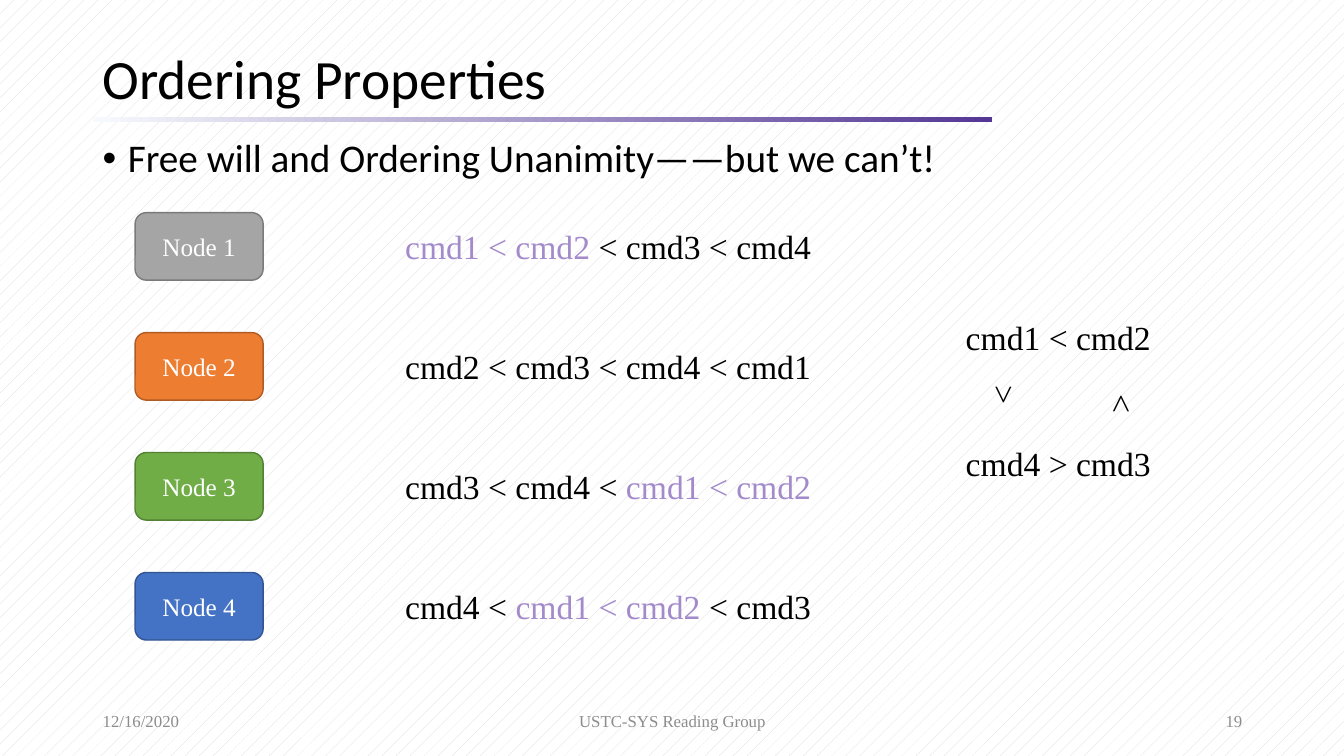
from lxml.etree import SubElement
from pptx import Presentation
from pptx.dml.color import RGBColor
from pptx.enum.dml import MSO_PATTERN
from pptx.enum.shapes import MSO_SHAPE
from pptx.enum.text import MSO_ANCHOR, MSO_AUTO_SIZE, PP_ALIGN
from pptx.oxml.ns import qn
from pptx.util import Inches, Pt

SLIDE_WIDTH, SLIDE_HEIGHT = 13.33, 7.5
MARGIN = 0.92
CONTENT_WIDTH = 11.5
NODE_LEFT, ORDER_LEFT, CYCLE_LEFT = 1.34, 3.92, 9.48
NODE_WIDTH, NODE_HEIGHT = 1.27, 0.67
FIRST_ROW, ROW_PITCH = 2.11, 1.19
LINE_HEIGHT = 0.5
FOOTER_TOP, FOOTER_HEIGHT = 6.95, 0.4

SERIF, SANS = "Times New Roman", "Calibri"
BLACK, WHITE, GREY, LILAC = "000000", "FFFFFF", "8C8C8C", "A38ACB"
AGREED = "cmd1 < cmd2"
NODES = [
    ("Node 1", "A5A5A5", "7A7A7A", "cmd1 < cmd2 < cmd3 < cmd4"),
    ("Node 2", "ED7D31", "AF5C24", "cmd2 < cmd3 < cmd4 < cmd1"),
    ("Node 3", "70AD47", "538035", "cmd3 < cmd4 < cmd1 < cmd2"),
    ("Node 4", "4472C4", "325491", "cmd4 < cmd1 < cmd2 < cmd3"),
]


def color(value):
    return RGBColor.from_string(value)


def style(font, size, name, ink):
    font.size, font.name = Pt(size), name
    font.color.rgb = color(ink)


def add_text(slide, box, text, size=24, name=SERIF, ink=BLACK, wrap=True,
             anchor=MSO_ANCHOR.TOP, align=PP_ALIGN.LEFT):
    label = slide.shapes.add_textbox(*map(Inches, box))
    frame = label.text_frame
    frame.word_wrap = wrap
    frame.auto_size = MSO_AUTO_SIZE.NONE if wrap else MSO_AUTO_SIZE.SHAPE_TO_FIT_TEXT
    frame.vertical_anchor = anchor
    paragraph = frame.paragraphs[0]
    paragraph.text = text
    paragraph.alignment = align
    for run in paragraph.runs:
        style(run.font, size, name, ink)
    return label


def add_bullet(paragraph):
    properties = paragraph._p.get_or_add_pPr()
    properties.set("marL", str(Inches(0.25)))
    properties.set("indent", str(-Inches(0.25)))
    SubElement(properties, qn("a:buFont")).set("typeface", "Arial")
    SubElement(properties, qn("a:buChar")).set("char", "•")


def paint_background(slide):
    fill = slide.background.fill
    fill.patterned()
    fill.pattern = MSO_PATTERN.PERCENT_5
    fill.fore_color.rgb = color("D9D9D9")
    fill.back_color.rgb = color(WHITE)


def add_title_rule(slide):
    rule = slide.shapes.add_shape(
        MSO_SHAPE.RECTANGLE, *map(Inches, (MARGIN, 1.16, 8.92, 0.05)))
    rule.shadow.inherit = False
    rule.line.fill.background()
    rule.fill.gradient()
    rule.fill.gradient_angle = 0
    for stop, shade, position in zip(rule.fill.gradient_stops, ("F7FAFD", "543795"), (0, 1)):
        stop.color.rgb = color(shade)
        stop.position = position


def add_node(slide, top, name, fill, outline):
    node = slide.shapes.add_shape(
        MSO_SHAPE.ROUNDED_RECTANGLE,
        *map(Inches, (NODE_LEFT, top, NODE_WIDTH, NODE_HEIGHT)))
    node.shadow.inherit = False
    node.fill.solid()
    node.fill.fore_color.rgb = color(fill)
    node.line.color.rgb = color(outline)
    node.line.width = Pt(1)
    frame = node.text_frame
    frame.text = name
    frame.vertical_anchor = MSO_ANCHOR.MIDDLE
    frame.paragraphs[0].alignment = PP_ALIGN.CENTER
    style(frame.paragraphs[0].runs[0].font, 18, SERIF, WHITE)


def add_order(slide, top, order):
    """Write a node's command order with the agreed pair highlighted."""
    box = (ORDER_LEFT, top + (NODE_HEIGHT - LINE_HEIGHT) / 2, 4.26, LINE_HEIGHT)
    paragraph = add_text(slide, box, "", wrap=False).text_frame.paragraphs[0]
    for part in order.partition(AGREED):
        if part:
            run = paragraph.add_run()
            run.text = part
            style(run.font, 24, SERIF, LILAC if part == AGREED else BLACK)


def add_vertical_sign(slide, left, rotation):
    sign = add_text(slide, (left, 3.82, 0.61, 0.29), "<", wrap=False)
    sign.text_frame._txBody.bodyPr.set("vert", "eaVert")
    sign.rotation = rotation


def add_footer(slide):
    for left, width, text, align in (
        (MARGIN, 3, "12/16/2020", PP_ALIGN.LEFT),
        (4.42, 4.5, "USTC-SYS Reading Group", PP_ALIGN.CENTER),
        (MARGIN + CONTENT_WIDTH - 3, 3, "19", PP_ALIGN.RIGHT),
    ):
        add_text(slide, (left, FOOTER_TOP, width, FOOTER_HEIGHT), text, 12,
                 ink=GREY, anchor=MSO_ANCHOR.MIDDLE, align=align)


def main():
    deck = Presentation()
    deck.slide_width, deck.slide_height = Inches(SLIDE_WIDTH), Inches(SLIDE_HEIGHT)
    slide = deck.slides.add_slide(deck.slide_layouts[6])
    paint_background(slide)
    add_title_rule(slide)

    title = add_text(slide, (MARGIN, 0.43, CONTENT_WIDTH, 0.75), "Ordering Properties",
                     39.6, SANS, anchor=MSO_ANCHOR.MIDDLE)
    claim = add_text(slide, (MARGIN, 1.33, CONTENT_WIDTH, 0.72),
                     "Free will and Ordering Unanimity——but we can’t!", 28, SANS)
    for heading in (title, claim):
        heading.text_frame.paragraphs[0].line_spacing = 0.9
    add_bullet(claim.text_frame.paragraphs[0])

    for row, (name, fill, outline, order) in enumerate(NODES):
        top = FIRST_ROW + row * ROW_PITCH
        add_node(slide, top, name, fill, outline)
        add_order(slide, top, order)

    for top, relation in ((3.09, "cmd1 < cmd2"), (4.34, "cmd4 > cmd3")):
        add_text(slide, (CYCLE_LEFT, top, 2.05, LINE_HEIGHT), relation, wrap=False)
    add_vertical_sign(slide, CYCLE_LEFT + 1.3, 0)
    add_vertical_sign(slide, CYCLE_LEFT + 0.2, 180)
    add_footer(slide)
    deck.save("out.pptx")


if __name__ == "__main__":
    main()
